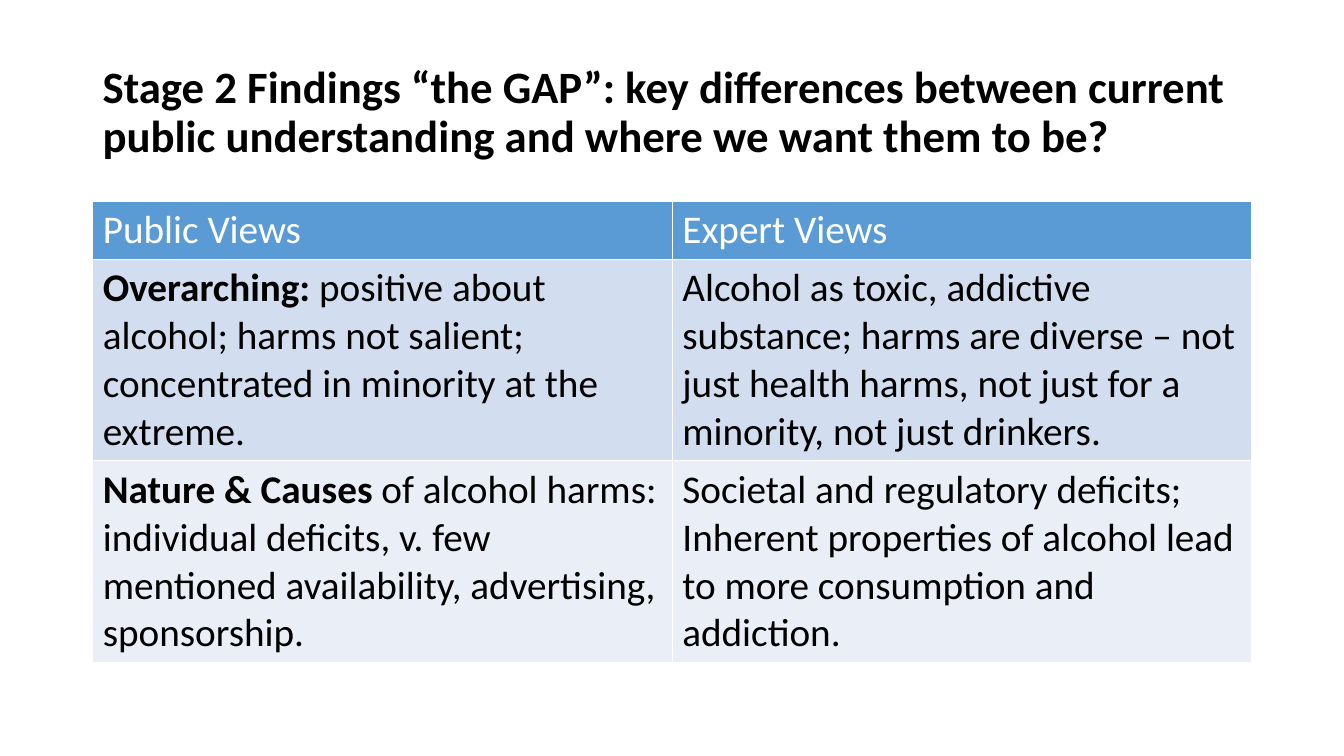
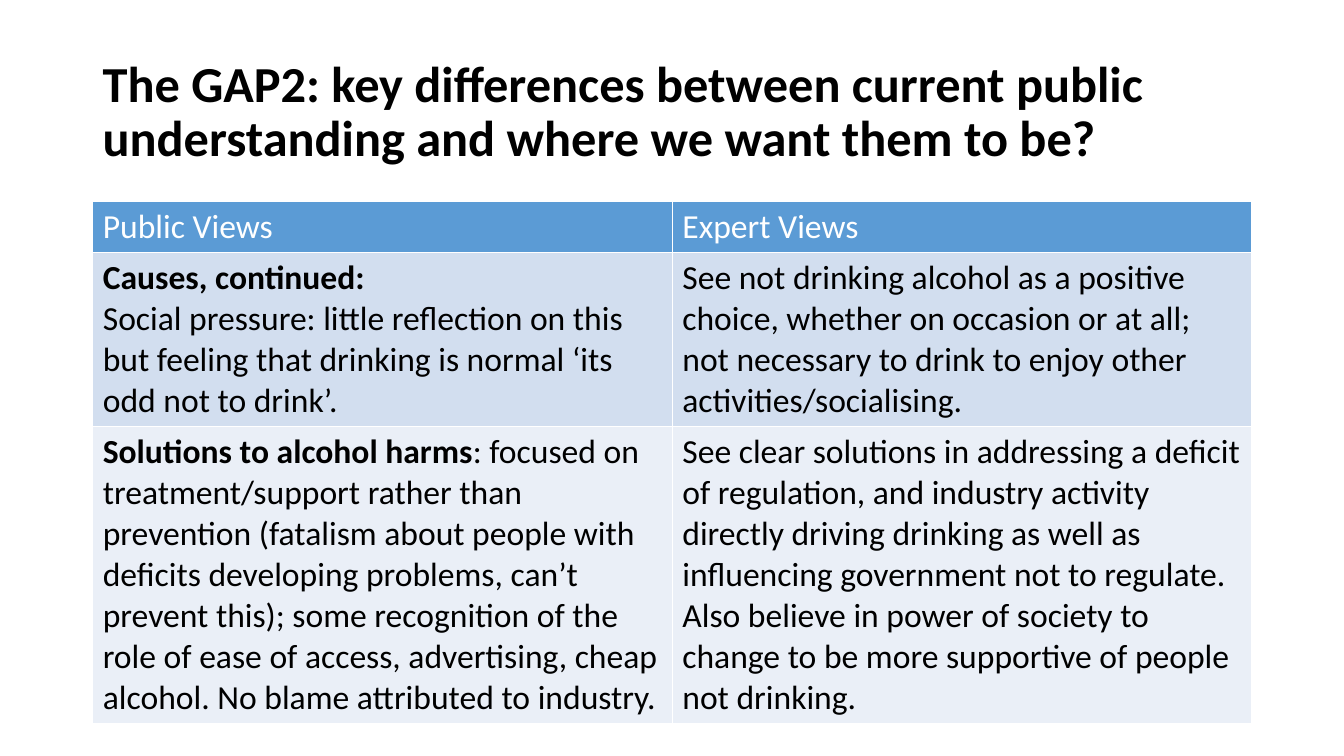
from lxml import etree
from pptx import Presentation
from pptx.dml.color import RGBColor
from pptx.enum.text import MSO_ANCHOR
from pptx.oxml.ns import qn
from pptx.util import Pt

MIDDLE = MSO_ANCHOR.MIDDLE
FONT = "Calibri"
COLORS = {"text": "000000", "paper": "FFFFFF", "head": "5B9BD5",
          "odd": "D2DEEF", "even": "EAEFF7"}
LEFT, WIDTH = 66.24, 828
HEADS = ["Public Views", "Expert Views"]


class Deck:
    """Holds the shared style and the current slide."""

    def __init__(self):
        self.prs = Presentation()
        self.prs.slide_width, self.prs.slide_height = Pt(960), Pt(540)
        self.slide = None

    def page(self):
        self.slide = self.prs.slides.add_slide(self.prs.slide_layouts[6])

    def label(self, frame, paras, size, color="text", space=None):
        """Fill a frame; each paragraph is a list of (text, bold) runs."""
        frame.word_wrap = True
        for i, runs in enumerate(paras):
            para = frame.add_paragraph() if i else frame.paragraphs[0]
            para.line_spacing = space
            for text, bold in runs:
                run = para.add_run()
                run.text = text
                style = {"name": FONT, "size": Pt(size), "bold": bold}
                for key, value in style.items():
                    setattr(run.font, key, value)
                run.font.color.rgb = RGBColor.from_string(COLORS[color])

    def title(self, text, size):
        box = self.slide.shapes.add_textbox(
            Pt(LEFT), Pt(28.8), Pt(WIDTH), Pt(104.4))
        box.text_frame.vertical_anchor = MIDDLE
        self.label(box.text_frame, [[(text, True)]], size, space=0.9)

    def border(self, cell):
        props = cell._tc.get_or_add_tcPr()
        for side in ("lnL", "lnR", "lnT", "lnB"):
            line = etree.SubElement(props, qn(f"a:{side}"), w=str(Pt(1)))
            fill = etree.SubElement(line, qn("a:solidFill"))
            etree.SubElement(fill, qn("a:srgbClr"), val=COLORS["paper"])

    def table(self, rows, lines, size):
        """Draw a two-column table; lines gives the text lines per row."""
        heights = [count * size * 1.22 + 7.2 for count in lines]
        grid = self.slide.shapes.add_table(
            len(rows), 2, Pt(LEFT), Pt(144), Pt(WIDTH), Pt(sum(heights))).table
        for r, row in enumerate(rows):
            grid.rows[r].height = Pt(heights[r])
            band = ("head", "odd", "even")[r]
            for c, paras in enumerate(row):
                cell = grid.cell(r, c)
                self.border(cell)
                cell.fill.solid()
                cell.fill.fore_color.rgb = RGBColor.from_string(COLORS[band])
                self.label(cell.text_frame, paras, size,
                           "text" if r else "paper")


# Titles, sizes, line counts and body rows
PAGES = [
    {"title": ("Stage 2 Findings “the GAP”: key differences between current "
               "public understanding and where we want them to be?", 32),
     "size": 28, "lines": (1, 4, 4),
     "rows": [
         [[[("Overarching: ", True),
            ("positive about alcohol; harms not salient; concentrated in "
             "minority at the extreme.", False)]],
          [[("Alcohol as toxic, addictive substance; harms are diverse – not "
             "just health harms, not just for a minority, not just "
             "drinkers.", False)]]],
         [[[("Nature & Causes", True),
            (" of alcohol harms: individual deficits, v. few mentioned "
             "availability, advertising, sponsorship.", False)]],
          [[("Societal and regulatory deficits;", False)],
           [("Inherent properties of alcohol lead to more consumption and "
             "addiction.", False)]]]]},
    {"title": ("The GAP2: key differences between current public "
               "understanding and where we want them to be?", 36),
     "size": 24, "lines": (1, 4, 7),
     "rows": [
         [[[("Causes, continued:", True)],
           [("Social pressure: little reflection on this but feeling that "
             "drinking is normal ‘its odd not to drink’.", False)]],
          [[("See not drinking alcohol as a positive choice, whether on "
             "occasion or at all; not necessary to drink to enjoy other "
             "activities/socialising.", False)]]],
         [[[("Solutions to alcohol harms", True),
            (": focused on treatment/support rather than prevention "
             "(fatalism about people with deficits developing problems, "
             "can’t prevent this); some recognition of the role of ease of "
             "access, advertising, cheap alcohol. No blame attributed to "
             "industry.", False)]],
          [[("See clear solutions in addressing a deficit of regulation, and "
             "industry activity directly driving drinking as well as "
             "influencing government not to regulate. Also believe in power "
             "of society to change to be more supportive of people not "
             "drinking.", False)]]]]},
]


def main():
    deck = Deck()
    header = [[[(text, False)]] for text in HEADS]
    for page in PAGES:
        deck.page()
        deck.title(*page["title"])
        deck.table([header] + page["rows"], page["lines"], page["size"])
    deck.prs.save("out.pptx")


if __name__ == "__main__":
    main()
